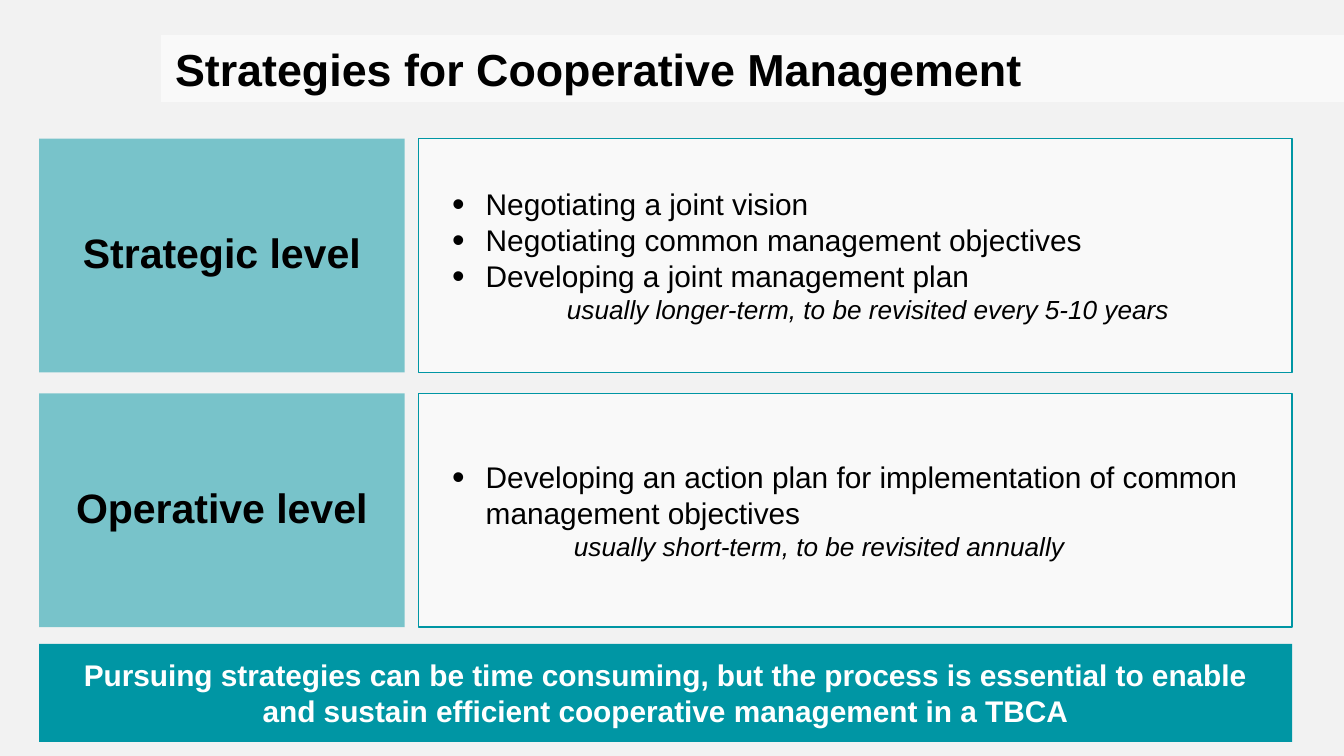
from pptx import Presentation
from pptx.dml.color import RGBColor
from pptx.enum.shapes import MSO_SHAPE as Shape
from pptx.enum.text import MSO_ANCHOR as Anchor, PP_ALIGN as Align
from pptx.oxml.ns import qn
from pptx.util import Pt
from lxml.etree import SubElement

PX = 9525
TEAL, WHITE, BLACK, GREY = "0096A4", "FFFFFF", "000000", "F2F2F2"
LEVELS = [
    ("Strategic level",
     ["Negotiating a joint vision",
      "Negotiating common management objectives",
      "Developing a joint management plan"],
     "usually longer-term, to be revisited every 5-10 years", 96),
    ("Operative level",
     ["Developing an action plan for implementation of common management objectives"],
     "usually short-term, to be revisited annually", 101),
]


def paint(color_format, color):
    """Set a colour from a hex string."""
    color_format.rgb = RGBColor.from_string(color)


def add_panel(page, box, color, opacity=100, outline=None, inset=10):
    """Add a filled rectangle and return its text frame."""
    panel = page.shapes.add_shape(Shape.RECTANGLE, *(v * PX for v in box))
    panel.shadow.inherit = False
    panel.fill.solid()
    paint(panel.fill.fore_color, color)
    if opacity < 100:
        swatch = panel.fill._xPr.find(qn("a:solidFill"))[0]
        SubElement(swatch, qn("a:alpha"), val=str(opacity * 1000))
    if outline:
        paint(panel.line.color, outline)
        panel.line.width = Pt(0.75)
    else:
        panel.line.fill.background()
    frame = panel.text_frame
    frame.word_wrap = True
    frame.vertical_anchor = Anchor.MIDDLE
    frame.margin_left = frame.margin_right = 10 * PX
    frame.margin_top = frame.margin_bottom = inset * PX
    return frame


def add_span(para, text, size, color=BLACK, bold=False, italic=False, align=Align.LEFT):
    """Add one formatted run to a paragraph."""
    para.alignment = align
    span = para.add_run()
    span.text = text
    font = span.font
    font.name, font.size, font.bold, font.italic = "Arial", Pt(size), bold, italic
    paint(font.color, color)


def indent(para, left, hanging=0):
    """Indent a paragraph by px and return its properties."""
    props = para._p.get_or_add_pPr()
    props.set("marL", str(left * PX))
    props.set("indent", str(-hanging * PX))
    return props


def add_bullet(para):
    """Give a paragraph a hanging black bullet."""
    props = indent(para, 38, 24)
    SubElement(SubElement(props, qn("a:buClr")), qn("a:srgbClr"), val=BLACK)
    SubElement(props, qn("a:buSzPct"), val="120000")
    SubElement(props, qn("a:buFont"), typeface="Arial")
    SubElement(props, qn("a:buChar"), char="•")


def add_title(page, box):
    """Place the title band."""
    frame = add_panel(page, box, WHITE, 55, inset=5)
    add_span(frame.paragraphs[0], "Strategies for Cooperative Management", 24, bold=True)


def add_level(page, box, name, points, note, note_left):
    """Place a level label and its panel of points side by side."""
    left, top, width, height = box
    label_width, gap = 261, 10
    label = add_panel(page, (left, top, label_width, height), TEAL, 50, inset=5).paragraphs[0]
    label.line_spacing = 0.9
    add_span(label, name, 22, bold=True, align=Align.CENTER)

    offset = label_width + gap
    frame = add_panel(page, (left + offset, top, width - offset, height), WHITE, 54, TEAL)
    for index, point in enumerate(points):
        para = frame.add_paragraph() if index else frame.paragraphs[0]
        add_bullet(para)
        add_span(para, point, 16)
    para = frame.add_paragraph()
    indent(para, note_left)
    add_span(para, note, 14, italic=True)


def add_conclusion(page, box):
    """Place the closing statement."""
    frame = add_panel(page, box, TEAL)
    add_span(frame.paragraphs[0],
             "Pursuing strategies can be time consuming, but the process is essential "
             "to enable and sustain efficient cooperative management in a TBCA",
             16, WHITE, bold=True, align=Align.CENTER)


def main():
    """Build and save the deck."""
    deck = Presentation()
    deck.slide_width, deck.slide_height = 960 * PX, 540 * PX
    page = deck.slides.add_slide(deck.slide_layouts[6])
    page.background.fill.solid()
    paint(page.background.fill.fore_color, GREY)

    left, width = 28, 895
    for row, level in enumerate(LEVELS):
        add_level(page, (left, 99 + row * 182, width, 167), *level)
    add_conclusion(page, (left, 460, width, 70))
    add_title(page, (115, 25, 845, 48))
    deck.save("out.pptx")


if __name__ == "__main__":
    main()
